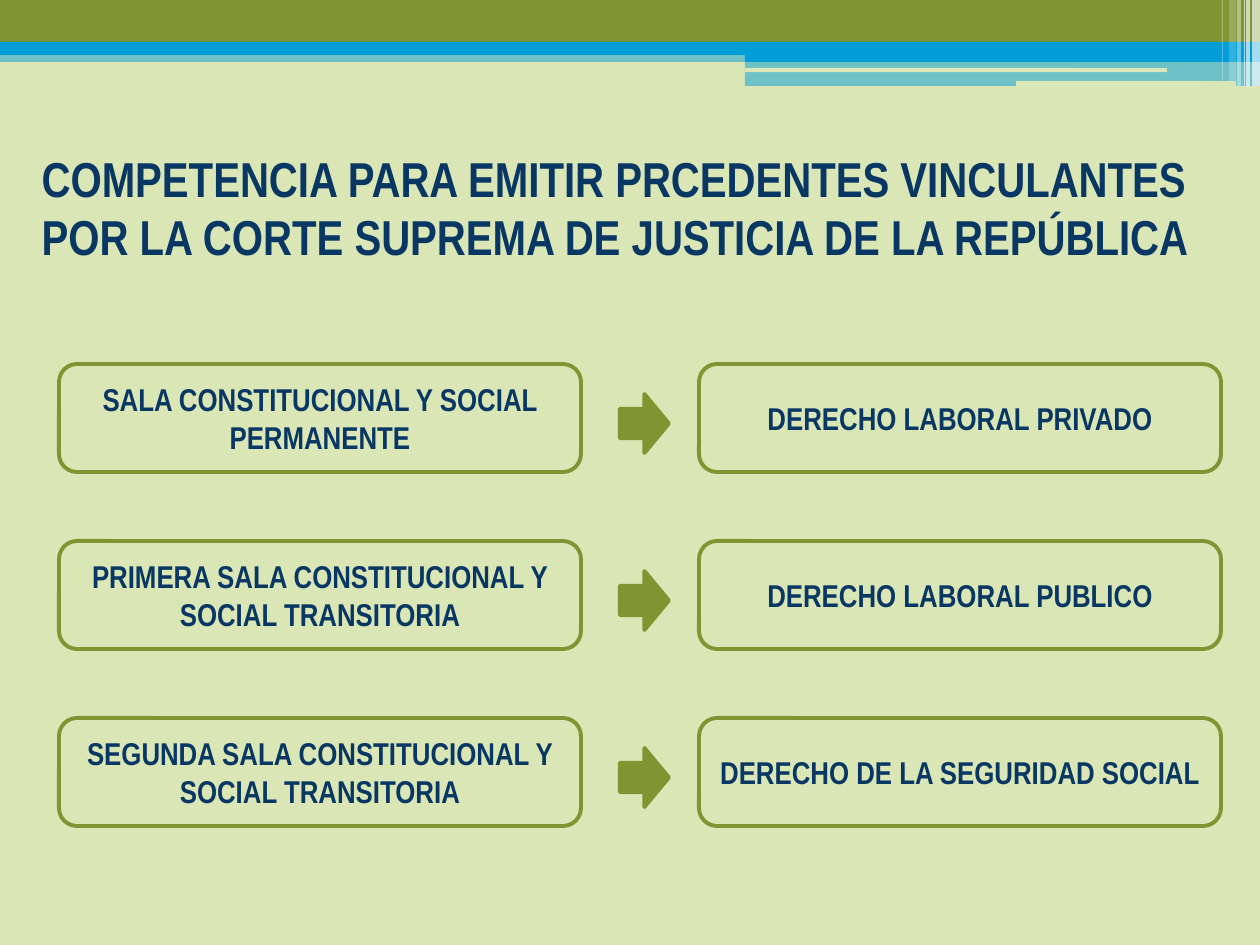
from dataclasses import dataclass

from lxml.etree import SubElement
from pptx import Presentation
from pptx.dml.color import RGBColor
from pptx.enum.shapes import MSO_SHAPE as Preset
from pptx.enum.text import MSO_ANCHOR as Anchor, MSO_AUTO_SIZE as AutoSize, PP_ALIGN as Align
from pptx.oxml.ns import qn
from pptx.util import Pt

EMU_PER_PX = 914400 / 126


@dataclass(frozen=True)
class Theme:
    paper: str = "DBE6B6"
    olive: str = "7E9532"
    outline: str = "7E9632"
    blue: str = "009DD9"
    white: str = "FFFFFF"
    ink: str = "083763"
    font: str = "Arial Narrow"
    title_size: int = 28
    label_size: int = 18
    line_width: float = 2.25


def px(*lengths):
    return [round(length * EMU_PER_PX) for length in lengths]


class SlideBuilder:
    """Draws themed elements on one slide, with lengths in px."""

    def __init__(self, slide, theme):
        self.slide, self.theme = slide, theme
        slide.background.fill.solid()
        slide.background.fill.fore_color.rgb = RGBColor.from_string(theme.paper)

    def shape(self, preset, bounds, fill=None, line=None, opacity=100):
        element = self.slide.shapes.add_shape(preset, *px(*bounds))
        element.shadow.inherit = False
        if fill:
            element.fill.solid()
            element.fill.fore_color.rgb = RGBColor.from_string(fill)
        else:
            element.fill.background()
        if line:
            element.line.color.rgb = RGBColor.from_string(line)
            element.line.width = Pt(self.theme.line_width)
        else:
            element.line.fill.background()
        if opacity < 100:
            color = element.fill._xPr.find(qn("a:solidFill"))[0]
            SubElement(color, qn("a:alpha"), val=str(opacity * 1000))
        return element

    def band(self, bounds, fill, opacity=100):
        self.shape(Preset.RECTANGLE, bounds, fill, opacity=opacity)

    def slot(self, bounds):
        self.shape(Preset.ROUNDED_RECTANGLE, bounds, self.theme.paper)

    def set_text(self, frame, text, size, align):
        frame.word_wrap = True
        frame.auto_size = AutoSize.NONE
        frame.vertical_anchor = Anchor.MIDDLE
        frame.text = text
        paragraph = frame.paragraphs[0]
        paragraph.alignment = align
        font = paragraph.font
        font.name, font.size, font.bold = self.theme.font, Pt(size), True
        font.color.rgb = RGBColor.from_string(self.theme.ink)

    def title(self, bounds, text):
        heading = self.slide.shapes.title
        heading.left, heading.top, heading.width, heading.height = px(*bounds)
        self.set_text(heading.text_frame, text, self.theme.title_size, Align.LEFT)

    def box(self, bounds, text):
        card = self.shape(Preset.ROUNDED_RECTANGLE, bounds, line=self.theme.outline)
        self.set_text(card.text_frame, text, self.theme.label_size, Align.CENTER)

    def arrow(self, bounds):
        self.shape(Preset.RIGHT_ARROW, bounds, self.theme.outline, self.theme.outline)


def main():
    deck = Presentation()
    deck.slide_width, deck.slide_height = px(1260, 945)
    theme = Theme()
    builder = SlideBuilder(deck.slides.add_slide(deck.slide_layouts[5]), theme)

    for bounds, fill, opacity in [
        ((0, 50, 1260, 12), theme.blue, 50),
        ((0, 0, 1260, 43), theme.olive, 100),
        ((0, 42, 1260, 13), theme.blue, 100),
        ((745, 49, 515, 13), theme.blue, 100),
        ((745, 62, 515, 24), theme.blue, 50),
    ]:
        builder.band(bounds, fill, opacity)
    builder.slot((745, 68, 422, 4))
    builder.slot((1016, 81, 220, 5))
    for left, width, height, opacity in [
        (1252, 8, 86, 65),
        (1246, 4, 86, 65),
        (1244, 1, 86, 60),
        (1237, 4, 86, 40),
        (1229, 7, 81, 20),
        (1222, 1, 81, 30),
    ]:
        builder.band((left, 0, width, height), theme.white, opacity)

    builder.title(
        (29, 129, 1191, 156),
        "COMPETENCIA PARA EMITIR PRCEDENTES VINCULANTES "
        "POR LA CORTE SUPREMA DE JUSTICIA DE LA REPÚBLICA",
    )
    competences = [
        ("SALA CONSTITUCIONAL Y SOCIAL PERMANENTE", "DERECHO LABORAL PRIVADO"),
        ("PRIMERA SALA CONSTITUCIONAL Y SOCIAL TRANSITORIA", "DERECHO LABORAL PUBLICO"),
        ("SEGUNDA SALA CONSTITUCIONAL Y SOCIAL TRANSITORIA", "DERECHO DE LA SEGURIDAD SOCIAL"),
    ]
    for row, (chamber, subject) in enumerate(competences):
        top = 364 + 177 * row
        builder.box((59, top, 522, 108), chamber)
        builder.box((699, top, 522, 108), subject)
        builder.arrow((620, top + 30, 49, 59))

    deck.save("out.pptx")


if __name__ == "__main__":
    main()
